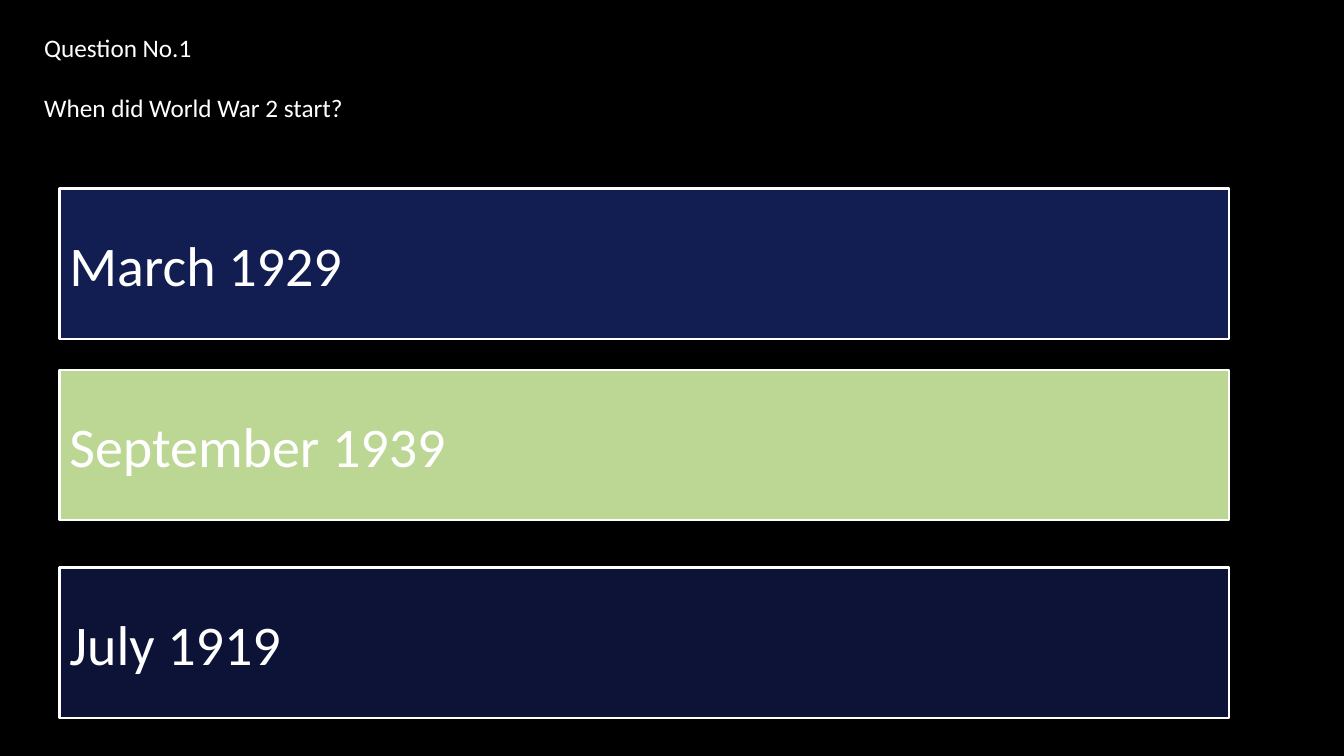
from pptx import Presentation
from pptx.dml.color import RGBColor
from pptx.enum.shapes import MSO_SHAPE
from pptx.enum.text import MSO_ANCHOR, PP_ALIGN
from pptx.util import Inches, Pt

QUESTION = ["Question No.1", "When did World War 2 start?"]
ANSWERS = [
    ("March 1929", 1.87, "121D51"),
    ("September 1939", 3.67, "BCD694"),
    ("July 1919", 5.63, "0C1336"),
]
WHITE = "FFFFFF"


def paint(fill, color):
    fill.solid()
    fill.fore_color.rgb = RGBColor.from_string(color)


def write(tf, lines, size, gap=0):
    tf.word_wrap = True
    for i, text in enumerate(lines):
        p = tf.add_paragraph() if i else tf.paragraphs[0]
        p.alignment = PP_ALIGN.LEFT
        if i:
            p.space_before = Pt(gap)
        r = p.add_run()
        r.text = text
        r.font.name = "Calibri"
        r.font.size = Pt(size)
        paint(r.font.fill, WHITE)


prs = Presentation()
prs.slide_width, prs.slide_height = Inches(13.33), Inches(7.5)
s = prs.slides.add_slide(prs.slide_layouts[6])
paint(s.background.fill, "000000")

box = s.shapes.add_textbox(Inches(0.34), Inches(0.27), Inches(10.75), Inches(1.01))
write(box.text_frame, QUESTION, 18, gap=21.5)

for answer, top, color in ANSWERS:
    sp = s.shapes.add_shape(
        MSO_SHAPE.RECTANGLE, Inches(0.59), Inches(top), Inches(11.6), Inches(1.49)
    )
    sp.shadow.inherit = False
    paint(sp.fill, color)
    paint(sp.line.fill, WHITE)
    sp.line.width = Pt(1.5)
    sp.text_frame.vertical_anchor = MSO_ANCHOR.MIDDLE
    write(sp.text_frame, [answer], 40)

prs.save("out.pptx")
